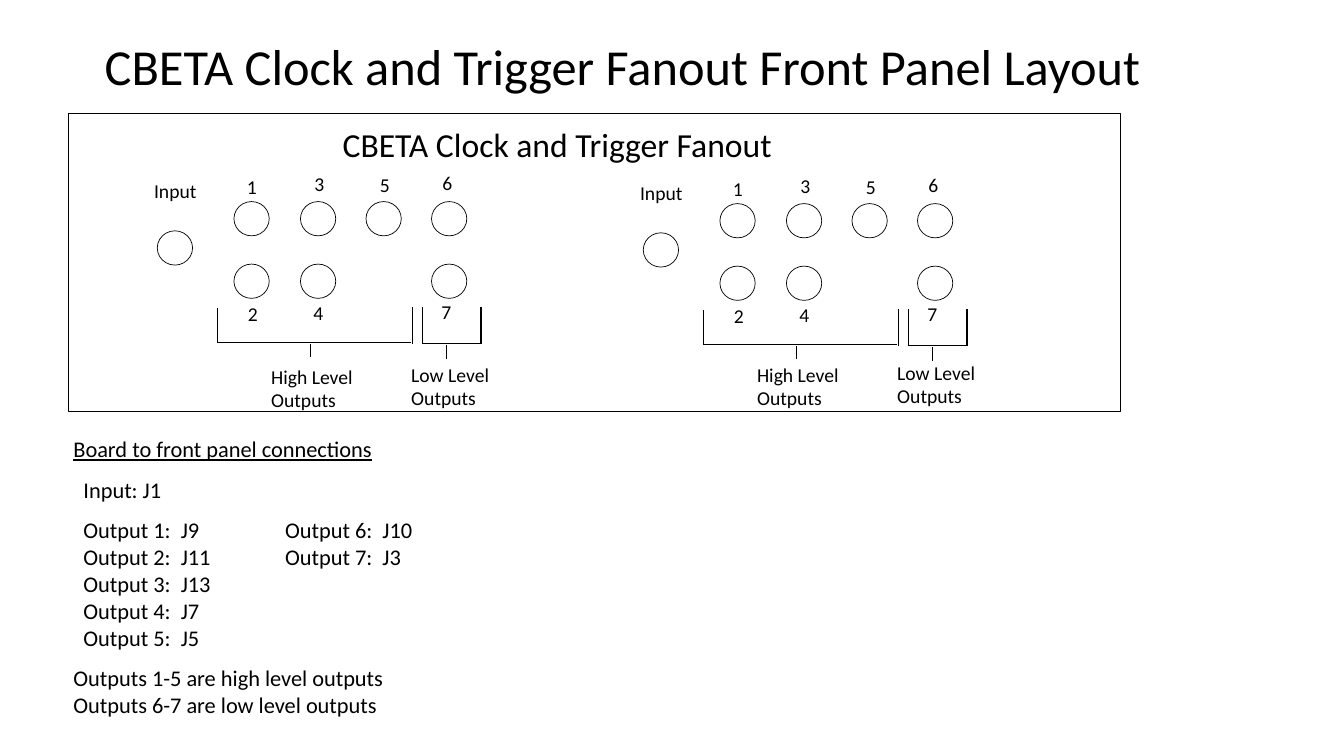
from typing import NamedTuple

import pptx
import pptx.dml.color
import pptx.enum.shapes
import pptx.enum.text
import pptx.oxml.ns
import pptx.util
from lxml import etree
from pptx.util import Inches

BLACK = "000000"
FONT = "Calibri"
JACK_WIDTH, JACK_HEIGHT = 0.35, 0.34
JACK_COLUMNS = (2.32, 2.98, 3.63, 4.28)
UPPER_ROW, LOWER_ROW = 2.0, 2.62


class Label(NamedTuple):
    text: str
    left: float
    top: float
    width: float = 0.4
    height: float = 0.34
    size: float = 14


class Segment(NamedTuple):
    x1: float
    y1: float
    x2: float
    y2: float


class Bank(NamedTuple):
    dx: float
    dy: float
    caption_dy: float


class Connection(NamedTuple):
    text: str
    gap_before: float = 0
    indent: float = 0
    underline: bool = False


BANKS = (Bank(0, 0, 0), Bank(4.82, 0.02, -0.02))

JACKS = (
    (1.56, 2.29),
    *((column, UPPER_ROW) for column in JACK_COLUMNS),
    *((JACK_COLUMNS[i], LOWER_ROW) for i in (0, 1, 3)),
)

JACK_LABELS = (
    Label("Input", 1.43, 1.73, 0.66),
    Label("1", 2.35, 1.69),
    Label("2", 2.36, 2.95),
    Label("3", 3.02, 1.66),
    Label("4", 3.01, 2.94),
    Label("5", 3.67, 1.67),
    Label("6", 4.29, 1.65),
    Label("7", 4.28, 2.93),
)

LEVEL_CAPTIONS = (
    Label("High Level Outputs", 2.59, 3.57, 1.08, 0.57),
    Label("Low Level Outputs", 3.98, 3.55, 1.08, 0.57),
)

BRACKETS = (
    Segment(2.16, 3.4, 4.08, 3.4),
    Segment(2.16, 3.4, 2.16, 3.06),
    Segment(4.09, 3.41, 4.09, 3.05),
    Segment(3.08, 3.54, 3.08, 3.41),
    Segment(4.19, 3.41, 4.78, 3.41),
    Segment(4.19, 3.41, 4.19, 3.05),
    Segment(4.77, 3.41, 4.77, 3.05),
    Segment(4.43, 3.56, 4.43, 3.42),
)

HEADINGS = (
    Label("CBETA Clock and Trigger Fanout", 3.3, 1.18, 5.64, 0.5, 24),
    Label("CBETA Clock and Trigger Fanout Front Panel Layout", 0.94, 0.3, 11.13, 0.71, 36),
)

CONNECTIONS = (
    Connection("Board to front panel connections", underline=True),
    Connection("Input: J1", 9.8, 0.1),
    Connection("Output 1:  J9\tOutput 6:  J10", 9.8, 0.1),
    Connection("Output 2:  J11\tOutput 7:  J3", 0, 0.1),
    Connection("Output 3:  J13", 0, 0.1),
    Connection("Output 4:  J7", 0, 0.1),
    Connection("Output 5:  J5", 0, 0.1),
    Connection("Outputs 1-5 are high level outputs", 9.8),
    Connection("Outputs 6-7 are low level outputs"),
)


def color(value: str) -> pptx.dml.color.RGBColor:
    return pptx.dml.color.RGBColor.from_string(value)


def style_font(font, size: float) -> None:
    font.name = FONT
    font.size = pptx.util.Pt(size)
    font.color.rgb = color(BLACK)


def add_outline(slide, kind, left: float, top: float, width: float, height: float) -> None:
    outline = slide.shapes.add_shape(
        kind, Inches(left), Inches(top), Inches(width), Inches(height)
    )
    outline.shadow.inherit = False
    outline.fill.background()
    outline.line.color.rgb = color(BLACK)
    outline.line.width = pptx.util.Pt(0.5)


def add_frame(slide, left: float, top: float, width: float, height: float):
    frame = slide.shapes.add_textbox(
        Inches(left), Inches(top), Inches(width), Inches(height)
    ).text_frame
    frame.word_wrap = True
    frame.auto_size = pptx.enum.text.MSO_AUTO_SIZE.SHAPE_TO_FIT_TEXT
    return frame


def add_label(slide, label: Label, dx: float = 0, dy: float = 0) -> None:
    frame = add_frame(slide, label.left + dx, label.top + dy, label.width, label.height)
    frame.text = label.text
    style_font(frame.paragraphs[0].runs[0].font, label.size)


def add_segment(slide, segment: Segment, bank: Bank) -> None:
    stroke = slide.shapes.add_connector(
        pptx.enum.shapes.MSO_CONNECTOR.STRAIGHT,
        Inches(segment.x1 + bank.dx),
        Inches(segment.y1 + bank.dy),
        Inches(segment.x2 + bank.dx),
        Inches(segment.y2 + bank.dy),
    )
    stroke.line.color.rgb = color(BLACK)
    stroke.line.width = pptx.util.Pt(1)
    etree.SubElement(stroke._element.spPr, pptx.oxml.ns.qn("a:effectLst"))


def add_bank(slide, bank: Bank) -> None:
    for left, top in JACKS:
        add_outline(slide, pptx.enum.shapes.MSO_SHAPE.OVAL,
                    left + bank.dx, top + bank.dy, JACK_WIDTH, JACK_HEIGHT)
    for label in JACK_LABELS:
        add_label(slide, label, bank.dx, bank.dy)
    for segment in BRACKETS:
        add_segment(slide, segment, bank)
    for caption in LEVEL_CAPTIONS:
        add_label(slide, caption, bank.dx, bank.caption_dy)


def add_connections(slide) -> None:
    frame = add_frame(slide, 0.63, 4.27, 3.8, 2.93)
    for index, connection in enumerate(CONNECTIONS):
        entry = frame.paragraphs[0] if index == 0 else frame.add_paragraph()
        entry.text = connection.text
        entry.space_before = pptx.util.Pt(connection.gap_before)
        for run in entry.runs:
            style_font(run.font, 16)
            run.font.underline = connection.underline
        properties = entry._p.get_or_add_pPr()
        properties.set("marL", str(Inches(connection.indent)))
        if "\t" in connection.text:
            tabs = etree.SubElement(properties, pptx.oxml.ns.qn("a:tabLst"))
            etree.SubElement(tabs, pptx.oxml.ns.qn("a:tab"), pos=str(Inches(2)), algn="l")


def main() -> None:
    presentation = pptx.Presentation()
    presentation.slide_width = Inches(13.33)
    presentation.slide_height = Inches(7.5)
    slide = presentation.slides.add_slide(presentation.slide_layouts[6])
    add_outline(slide, pptx.enum.shapes.MSO_SHAPE.RECTANGLE, 0.68, 1.12, 10.43, 2.96)
    add_connections(slide)
    for bank in BANKS:
        add_bank(slide, bank)
    for heading in HEADINGS:
        add_label(slide, heading)
    presentation.save("out.pptx")


if __name__ == "__main__":
    main()
